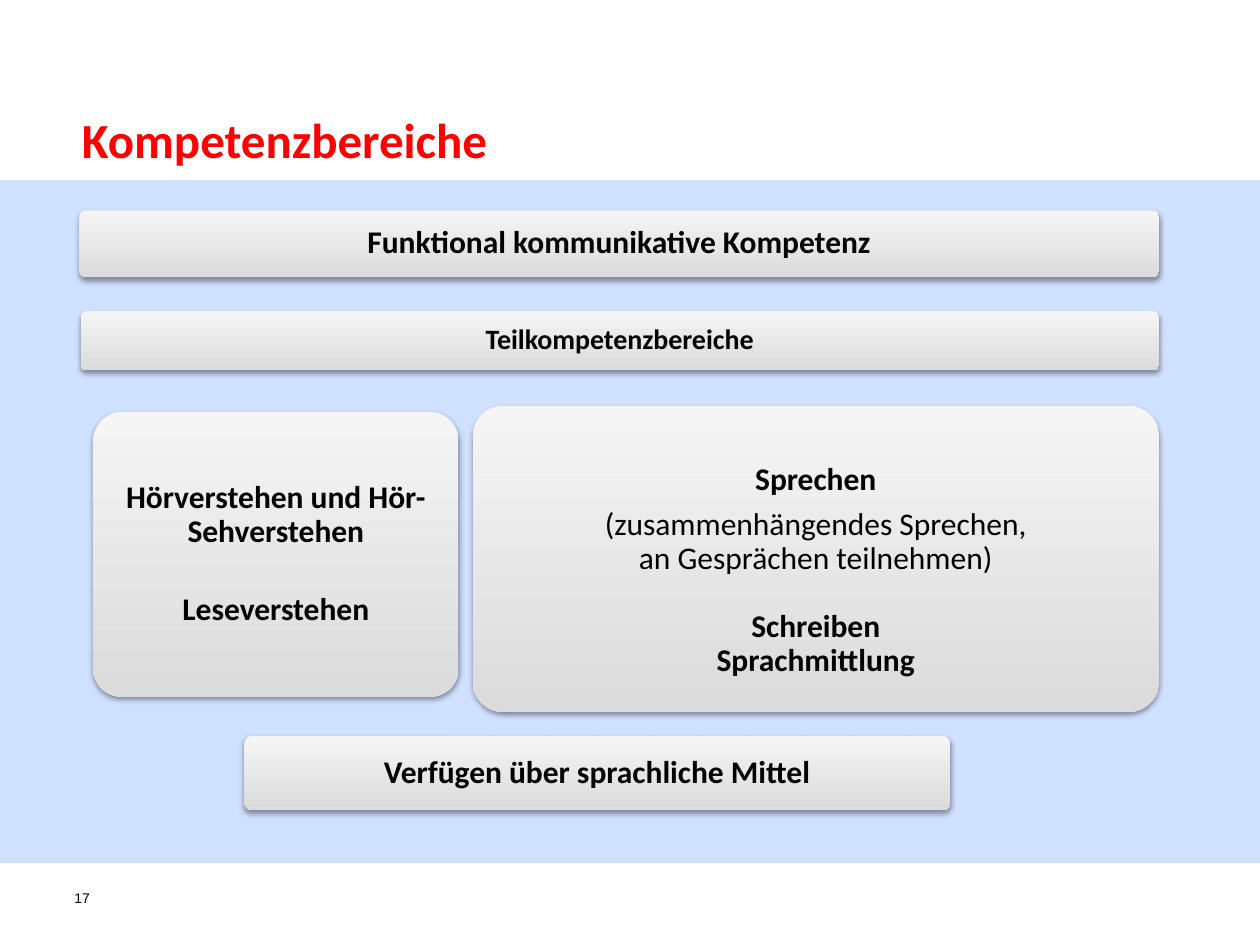
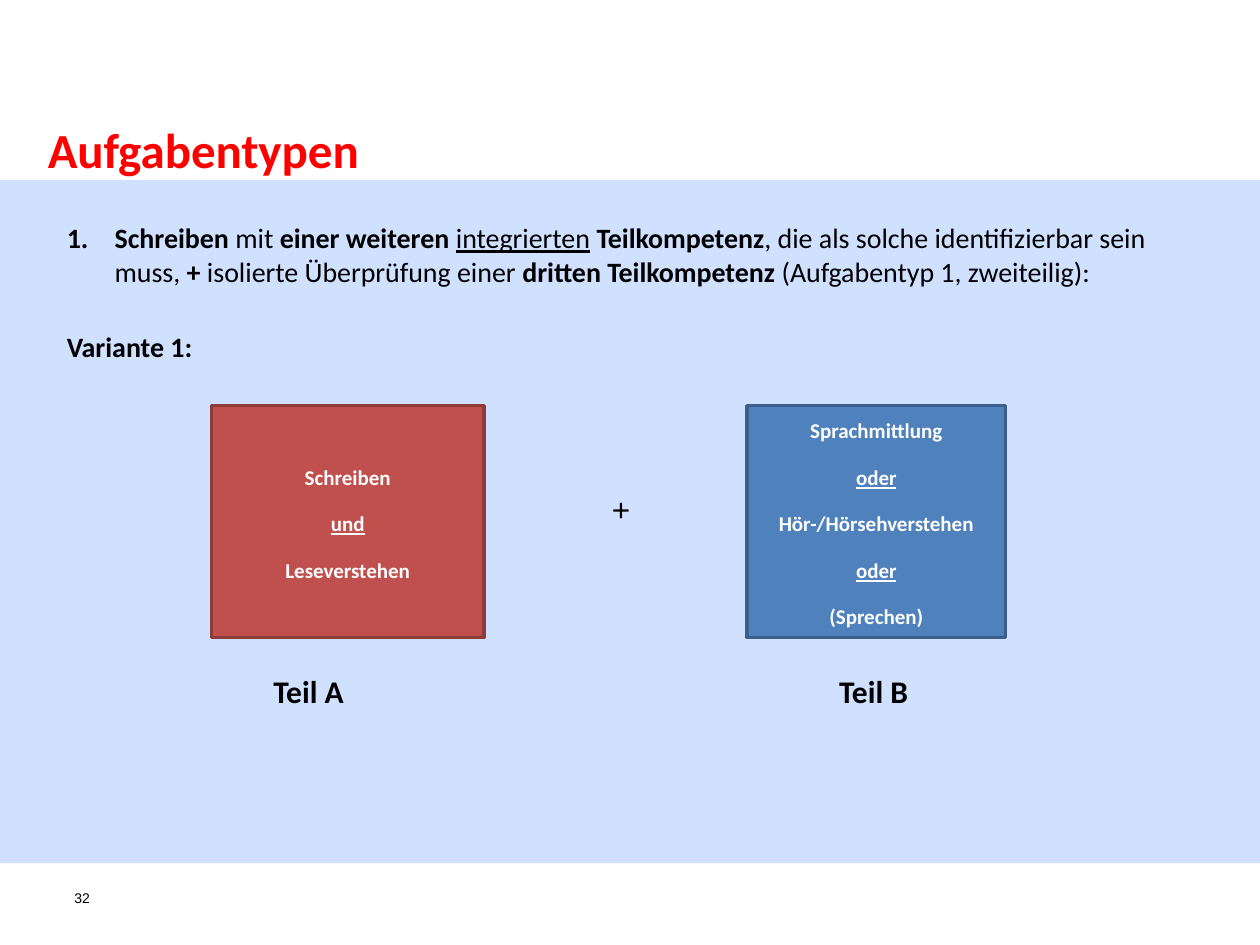
from dataclasses import dataclass

from lxml.etree import SubElement
from pptx import Presentation
from pptx.dml.color import RGBColor
from pptx.enum.shapes import MSO_SHAPE as Shape
from pptx.enum.text import MSO_ANCHOR as Anchor, MSO_AUTO_SIZE as AutoSize, PP_ALIGN as Align
from pptx.oxml.ns import qn
from pptx.util import Inches, Pt

COLORS = {
    "band": "6699FF", "title": "FF0000", "ink": "000000", "white": "FFFFFF",
    "panel_top": "F5F5F5", "panel_bottom": "DBDBDB",
    "red": "C0504D", "red_line": "8E3B39",
    "blue": "4F81BD", "blue_line": "3A5F8C",
}
COLUMNS, ROWS = 100, 75
TITLE_ONLY, TITLE_AND_BODY = 5, 1


@dataclass
class Para:
    """Spans are (text, style) pairs; style holds b for bold, u for underline."""
    spans: list
    after: float = 0


def bold(text, **spacing):
    return Para([(text, "b")], **spacing)


def color(name):
    return RGBColor.from_string(COLORS[name])


class SlideBuilder:
    font = "Calibri"

    def __init__(self):
        self.deck = Presentation()
        self.deck.slide_width, self.deck.slide_height = Inches(10), Inches(7.5)
        self.page = None

    # Grid and text helpers
    def area(self, left, top, width, height):
        column = self.deck.slide_width / COLUMNS
        row = self.deck.slide_height / ROWS
        return [round(n * unit) for n, unit in
                zip((left, top, width, height), (column, row, column, row))]

    def set_text(self, frame, paras, size, ink="ink", font=None, align=Align.LEFT,
                 anchor=Anchor.TOP, line=1.0, insets=(0, 0, 0, 0)):
        frame.word_wrap = True
        frame.auto_size = AutoSize.NONE
        frame.vertical_anchor = anchor
        (frame.margin_left, frame.margin_top,
         frame.margin_right, frame.margin_bottom) = map(Inches, insets)
        for index, para in enumerate(paras):
            target = frame.add_paragraph() if index else frame.paragraphs[0]
            target.alignment, target.line_spacing = align, line
            target.space_before, target.space_after = Pt(0), Pt(para.after)
            for text, style in para.spans:
                span = target.add_run()
                span.text = text
                span.font.name, span.font.size = font or self.font, Pt(size)
                span.font.bold = "b" in style
                span.font.underline = "u" in style
                span.font.color.rgb = color(ink)

    # Shared parts
    def start(self, layout, number, title, left, top):
        self.page = self.deck.slides.add_slide(self.deck.slide_layouts[layout])
        box = self.page.shapes.title
        box.left, box.top, box.width, box.height = self.area(left, top, 88, 4.8)
        self.set_text(box.text_frame, [bold(title)], 28, "title")
        self.label(str(number), 5.9, 70.6, 3.2, 3.7, 8, font="Arial")

    def band_on_master(self):
        """Draw the pale band once and hand it to the slide master."""
        band = self.page.shapes.add_shape(Shape.RECTANGLE, *self.area(0, 14.3, 100, 54.2))
        band.shadow.inherit = False
        band.fill.solid()
        band.fill.fore_color.rgb = color("band")
        band.line.fill.background()
        tint = band.element.spPr.find(".//" + qn("a:srgbClr"))
        SubElement(tint, qn("a:alpha"), val="30000")
        self.deck.slide_master.element.cSld.spTree.insert(2, band.element)

    # Kinds of element
    def label(self, text, left, top, width, height, size, style="", **options):
        box = self.page.shapes.add_textbox(*self.area(left, top, width, height))
        self.set_text(box.text_frame, [Para([(text, style)])], size, **options)

    def panel(self, paras, left, top, width, height, size=18, inset=0.09, top_inset=0.09):
        box = self.page.shapes.add_shape(Shape.ROUNDED_RECTANGLE,
                                         *self.area(left, top, width, height))
        box.adjustments[0] = 0.1
        box.line.fill.background()
        box.fill.gradient()
        box.fill.gradient_angle = 270
        for stop, name in zip(box.fill.gradient_stops, ("panel_top", "panel_bottom")):
            stop.color.rgb = color(name)
        box.shadow.inherit = False
        effects = box.element.spPr.find(qn("a:effectLst"))
        shadow = SubElement(effects, qn("a:outerShdw"), blurRad=str(Pt(3.1)),
                            dist=str(Pt(1.6)), dir="5400000", rotWithShape="0")
        shade = SubElement(shadow, qn("a:srgbClr"), val=COLORS["ink"])
        SubElement(shade, qn("a:alpha"), val="38000")
        self.set_text(box.text_frame, paras, size, align=Align.CENTER, anchor=Anchor.MIDDLE,
                      line=0.9, insets=(inset, top_inset, inset, 0.09))

    def task(self, lines, left, width, fill):
        box = self.page.shapes.add_shape(Shape.FLOWCHART_PROCESS,
                                         *self.area(left, 32.2, width, 18.4))
        box.shadow.inherit = False
        box.fill.solid()
        box.fill.fore_color.rgb = color(fill)
        box.line.color.rgb = color(fill + "_line")
        box.line.width = Pt(2)
        links = ("und", "oder")
        paras = [Para([(text, "bu" if text in links else "b")], after=10) for text in lines]
        self.set_text(box.text_frame, paras, 12, "white", align=Align.CENTER,
                      anchor=Anchor.MIDDLE, line=1.15, insets=(0.1, 0.05, 0.1, 0.05))

    def numbered_text(self, paras, left, top, width, height):
        """The first paragraph is numbered, the others stand flush left."""
        box = self.page.placeholders[1]
        box.left, box.top, box.width, box.height = self.area(left, top, width, height)
        frame = box.text_frame
        self.set_text(frame, paras, 16, insets=(0.1, 0.05, 0.1, 0.05))
        for index, para in enumerate(frame.paragraphs):
            indent = 0 if index else Inches(0.38)
            props = para._p.get_or_add_pPr()
            props.set("marL", str(indent))
            props.set("indent", str(-indent))
            if index:
                SubElement(props, qn("a:buNone"))
            else:
                SubElement(props, qn("a:buFont"), typeface="+mj-lt")
                SubElement(props, qn("a:buAutoNum"), type="arabicPeriod")


def competence_areas(build):
    build.start(TITLE_ONLY, 17, "Kompetenzbereiche", 6.5, 8.7)
    build.band_on_master()
    build.panel([bold("Funktional kommunikative Kompetenz")], 6.3, 16.7, 85.7, 5.3)
    build.panel([bold("Teilkompetenzbereiche")], 6.4, 24.7, 85.6, 4.7, size=16)
    # Receptive and productive skills
    build.panel([bold("Hörverstehen und Hör-Sehverstehen", after=25.5),
                 bold("Leseverstehen")], 7.4, 32.7, 29, 22.6, inset=0.14)
    build.panel([bold("Sprechen", after=6.3),
                 Para([("(zusammenhängendes Sprechen,", "")]),
                 Para([("an Gesprächen teilnehmen)", "")], after=19.8),
                 bold("Schreiben"), bold("Sprachmittlung")],
                37.5, 32.2, 54.5, 24.3, top_inset=0.28)
    build.panel([bold("Verfügen über sprachliche Mittel")], 19.4, 58.4, 56, 5.9)


def task_types(build):
    build.start(TITLE_AND_BODY, 32, "Aufgabentypen", 3.8, 9.5)
    build.numbered_text([
        Para([("Schreiben", "b"), (" mit ", ""), ("einer weiteren ", "b"),
              ("integrierten", "u"), (" Teilkompetenz", "b"),
              (", die als solche identifizierbar sein muss,", ""), (" + ", "b"),
              ("isolierte Überprüfung einer ", ""), ("dritten Teilkompetenz", "b"),
              (" (Aufgabentyp 1, zweiteilig):", "")], after=24),
        bold("Variante 1:"),
    ], 4.3, 17, 91.4, 12.4)
    # Two parts of the task
    build.task(["Schreiben", "und", "Leseverstehen"], 16.8, 21.6, "red")
    build.label("+", 45.9, 38.4, 6.8, 4, 18, font="Arial", align=Align.CENTER,
                anchor=Anchor.MIDDLE)
    build.task(["Sprachmittlung", "oder", "Hör-/Hörsehverstehen", "oder", "(Sprechen)"],
               59.3, 20.5, "blue")
    for caption, left in (("Teil A", 21.7), ("Teil B", 66.6)):
        build.label(caption, left, 52.8, 10, 4.1, 18, "b", anchor=Anchor.MIDDLE)


def main():
    build = SlideBuilder()
    competence_areas(build)
    task_types(build)
    build.deck.save("out.pptx")


if __name__ == "__main__":
    main()
